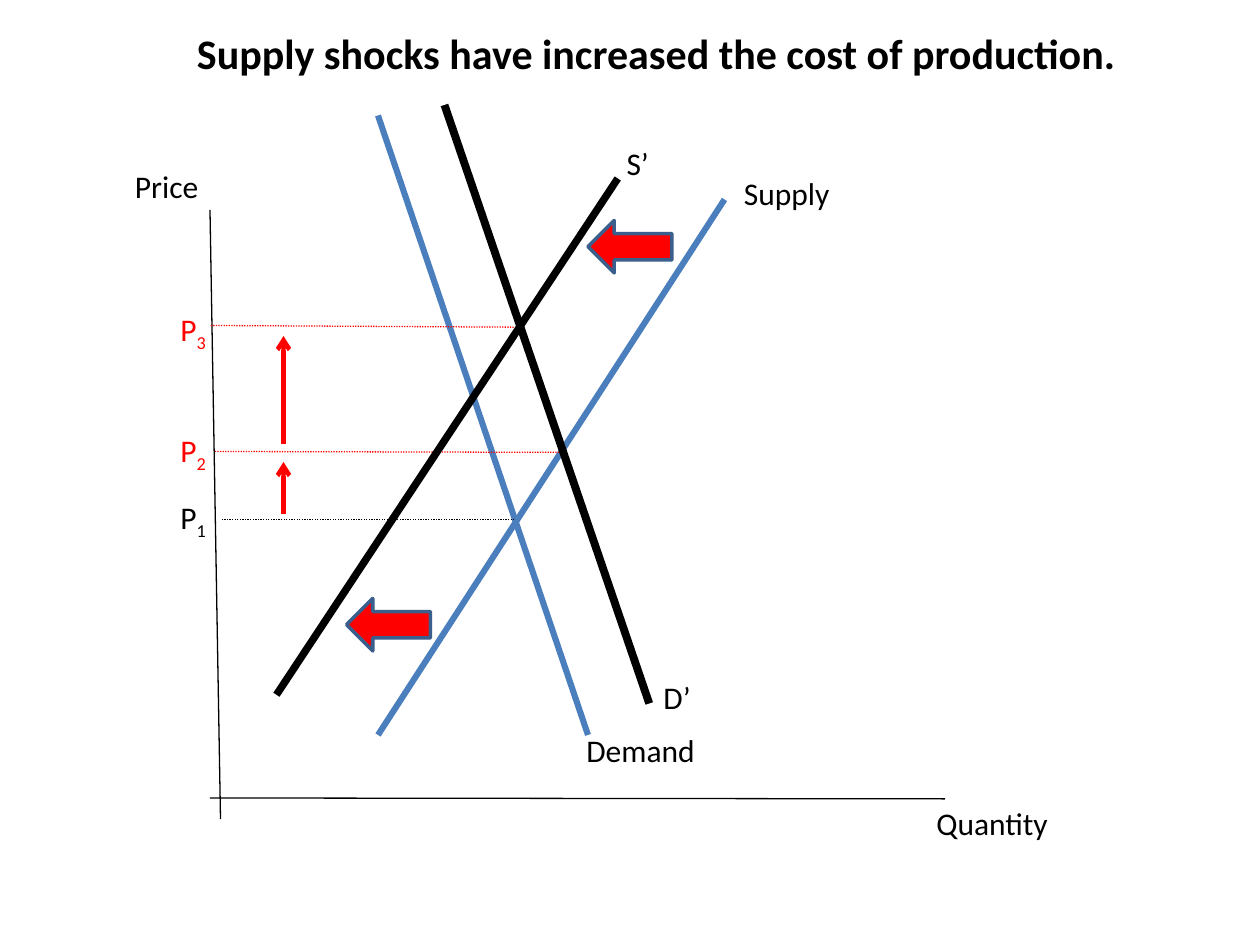
from lxml import etree
from pptx import Presentation
from pptx.dml.color import RGBColor
from pptx.enum.dml import MSO_LINE
from pptx.enum.shapes import MSO_CONNECTOR, MSO_SHAPE
from pptx.enum.text import MSO_ANCHOR, PP_ALIGN
from pptx.oxml.ns import qn
from pptx.util import Pt

STRAIGHT = MSO_CONNECTOR.STRAIGHT
ARROW = MSO_SHAPE.LEFT_ARROW
DOTS = MSO_LINE.ROUND_DOT
CENTER = PP_ALIGN.CENTER
MIDDLE = MSO_ANCHOR.MIDDLE
BLACK, RED, BLUE, EDGE = "000000", "FF0000", "4B7EBC", "3A5F8C"
FONT = "Calibri"


def color(code):
    return RGBColor.from_string(code)


def style(run, size, code, bold=False):
    run.font.name = FONT
    run.font.size = Pt(size)
    run.font.bold = bold
    run.font.color.rgb = color(code)


def add_line(slide, box, ends, code, width, dash=None, head=False):
    left, top = box[:2]
    x1, y1, x2, y2 = ends
    line = slide.shapes.add_connector(
        STRAIGHT, Pt(left + x1), Pt(top + y1), Pt(left + x2), Pt(top + y2))
    line.line.color.rgb = color(code)
    line.line.width = Pt(width)
    if dash:
        line.line.dash_style = dash
    if head:
        tail = etree.SubElement(line.line._get_or_add_ln(), qn("a:tailEnd"))
        tail.set("type", "arrow")
    etree.SubElement(line._element.spPr, qn("a:effectLst"))


def add_label(slide, box, x, y, width, text, code=BLACK, sub=None):
    label = slide.shapes.add_textbox(
        Pt(box[0] + x), Pt(box[1] + y), Pt(width), Pt(29))
    frame = label.text_frame
    frame.word_wrap = True
    frame.text = text
    para = frame.paragraphs[0]
    if sub:
        run = para.add_run()
        run.text = sub
        run.font._element.set("baseline", "-25000")
    for run in para.runs:
        style(run, 18, code)


def add_block(slide, box, x, y):
    block = slide.shapes.add_shape(
        ARROW, Pt(box[0] + x), Pt(box[1] + y), Pt(48), Pt(30))
    block.shadow.inherit = False
    block.fill.solid()
    block.fill.fore_color.rgb = color(RED)
    block.line.color.rgb = color(EDGE)
    block.line.width = Pt(2)


def add_title(slide, box, text):
    title = slide.shapes.title
    title.left, title.top, title.width, title.height = map(Pt, box)
    frame = title.text_frame
    frame.text = text
    frame.vertical_anchor = MIDDLE
    para = frame.paragraphs[0]
    para.alignment = CENTER
    style(para.runs[0], 24, BLACK, bold=True)


def add_graph(slide, box):
    # Axes
    for ends in ((50, 60, 56, 408), (50, 396, 470, 396.5)):
        add_line(slide, box, ends, BLACK, 0.75)

    # First demand and supply curves
    for ends in ((146, 6, 266, 360), (146, 360, 344, 54)):
        add_line(slide, box, ends, BLUE, 3.5)

    # Price levels, from curve to axis
    levels = [
        ("1", (224, 237, 56, 237), 221, BLACK),
        ("2", (251, 198.5, 53, 198), 183, RED),
        ("3", (228, 127, 50, 126), 113.5, RED),
    ]
    for sub, ends, y, code in levels:
        add_line(slide, box, ends, code, 0.75, dash=DOTS)
        add_label(slide, box, 26, y, 36, "P", code, sub)

    # Shifted demand and supply curves
    add_line(slide, box, (184, 0, 301, 342), BLACK, 4.5)
    add_line(slide, box, (88, 337, 283, 42), BLACK, 4.25)

    # Price rises
    for low, high in ((234, 204), (194, 132)):
        add_line(slide, box, (92, low, 92, high), RED, 2.5, head=True)

    # Supply shift
    for x, y in ((266, 66), (128, 282)):
        add_block(slide, box, x, y)

    # Names of axes and curves
    names = [
        ("Price", 0, 32, 66),
        ("Quantity", 458, 396, 90),
        ("Supply", 348, 36, 90),
        ("Demand", 258, 354, 90),
        ("S’", 281, 19, 42),
        ("D’", 302, 324, 48),
    ]
    for text, x, y, width in names:
        add_label(slide, box, x, y, width, text)


def main():
    deck = Presentation()
    deck.slide_width, deck.slide_height = Pt(720), Pt(540)
    slide = deck.slides.add_slide(deck.slide_layouts[5])
    add_title(slide, (42, 12, 666, 36),
              "Supply shocks have increased the cost of production.")
    add_graph(slide, (70, 60, 550, 430))
    deck.save("out.pptx")


if __name__ == "__main__":
    main()
